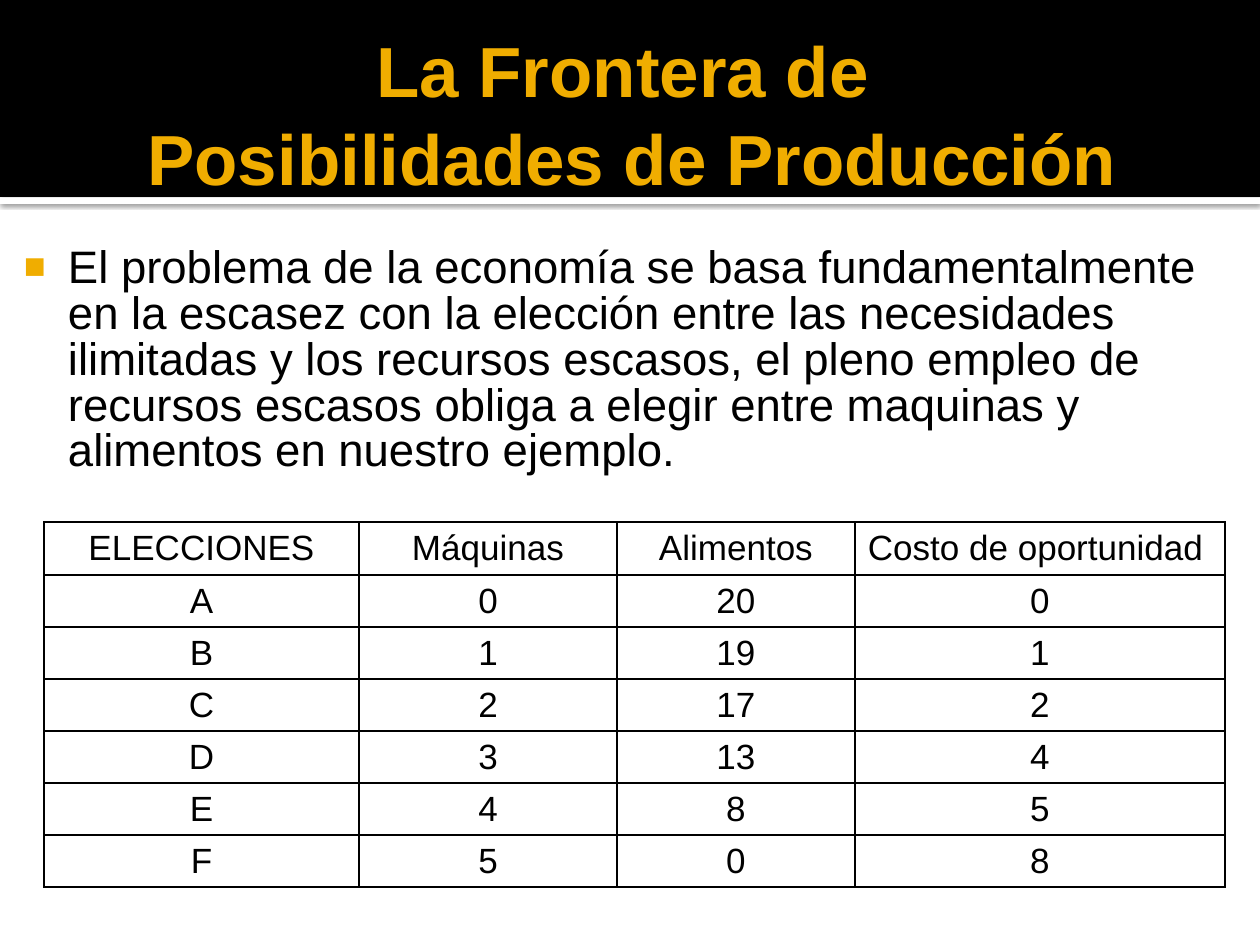
import pptx
import pptx.dml.color
import pptx.enum.shapes
import pptx.enum.text
import pptx.oxml
import pptx.oxml.ns
import pptx.util

ALIGN = pptx.enum.text.PP_ALIGN
ANCHOR = pptx.enum.text.MSO_ANCHOR
COLORS = {"black": "000000", "white": "FFFFFF", "gold": "F0AD00"}
NAMESPACE = pptx.oxml.ns.nsdecls("a")


def px(value):
    return round(value * 914400 / 126)


def color(name):
    return pptx.dml.color.RGBColor.from_string(COLORS[name])


def assign(target, values):
    for name, value in values.items():
        setattr(target, name, value)


def add_xml(parent, tag, attributes="", content=""):
    parent.append(pptx.oxml.parse_xml(f"<a:{tag} {NAMESPACE} {attributes}>{content}</a:{tag}>"))


class SlideBuilder:
    font_name = "Arial"

    def __init__(self, presentation):
        self.slide = presentation.slides.add_slide(presentation.slide_layouts[5])

    def fill_text(self, frame, text, size, ink, frame_format, paragraph_format, bold=False):
        assign(frame, frame_format)
        frame.text = text
        paragraph = frame.paragraphs[0]
        assign(paragraph, paragraph_format)
        for run in paragraph.runs:
            assign(run.font, {"name": self.font_name, "size": pptx.util.Pt(size), "bold": bold})
            run.font.color.rgb = color(ink)
        return paragraph

    def band(self, top, height, fill, shadow=False):
        shape = self.slide.shapes.add_shape(
            pptx.enum.shapes.MSO_SHAPE.RECTANGLE, 0, px(top), px(1260), px(height))
        shape.shadow.inherit = False
        shape.fill.solid()
        shape.fill.fore_color.rgb = color(fill)
        shape.line.fill.background()
        if shadow:
            effects = shape._element.spPr.find(pptx.oxml.ns.qn("a:effectLst"))
            add_xml(effects, "outerShdw", 'blurRad="31750" dist="10160" dir="5400000"',
                    f'<a:srgbClr val="{COLORS["black"]}"><a:alpha val="60000"/></a:srgbClr>')

    def title(self, text, box):
        shape = self.slide.shapes.title
        self.slide.shapes._spTree.append(shape._element)
        assign(shape, dict(zip(("left", "top", "width", "height"), map(px, box))))
        self.fill_text(shape.text_frame, text, 40.5, "gold",
                       {"word_wrap": True, "vertical_anchor": ANCHOR.MIDDLE,
                        "auto_size": pptx.enum.text.MSO_AUTO_SIZE.NONE,
                        "margin_left": px(13), "margin_right": px(6),
                        "margin_top": px(6), "margin_bottom": px(6)},
                       {"alignment": ALIGN.CENTER, "line_spacing": 1.04}, bold=True)

    def bullet(self, text, box):
        shape = self.slide.shapes.add_textbox(*map(px, box))
        paragraph = self.fill_text(shape.text_frame, text, 26, "black",
                                   {"word_wrap": True, "margin_left": px(8), "margin_right": px(13),
                                    "margin_top": px(13), "margin_bottom": px(6)},
                                   {"line_spacing": 0.84})
        properties = paragraph._p.get_or_add_pPr()
        properties.set("marL", str(px(60)))
        properties.set("indent", str(px(-44)))
        add_xml(properties, "buClr", content=f'<a:srgbClr val="{COLORS["gold"]}"/>')
        add_xml(properties, "buSzPct", 'val="80000"')
        add_xml(properties, "buFont", f'typeface="{self.font_name}"')
        add_xml(properties, "buChar", 'char="■"')

    def cell(self, cell, text, alignment):
        self.fill_text(cell.text_frame, text, 20, "black",
                       {"word_wrap": True}, {"alignment": alignment})
        assign(cell, {"vertical_anchor": ANCHOR.MIDDLE, "margin_left": px(13), "margin_right": px(13),
                      "margin_top": px(4), "margin_bottom": px(4)})
        properties = cell._tc.get_or_add_tcPr()
        for side in ("lnL", "lnR", "lnT", "lnB"):
            add_xml(properties, side, 'w="12700"',
                    f'<a:solidFill><a:srgbClr val="{COLORS["black"]}"/></a:solidFill>')
        cell.fill.background()

    def table(self, rows, left, top, widths, heights):
        frame = self.slide.shapes.add_table(
            len(rows), len(widths), px(left), px(top), px(sum(widths)), px(sum(heights)))
        table = frame.table
        assign(table, {"first_row": False, "horz_banding": False})
        for column, width in zip(table.columns, widths):
            column.width = px(width)
        for row, height in zip(table.rows, heights):
            row.height = px(height)
        for row_index, row in enumerate(rows):
            for column_index, text in enumerate(row):
                is_long_header = row_index == 0 and column_index == len(row) - 1
                self.cell(table.cell(row_index, column_index), text,
                          ALIGN.JUSTIFY if is_long_header else ALIGN.CENTER)


def main():
    presentation = pptx.Presentation()
    assign(presentation, {"slide_width": px(1260), "slide_height": px(945)})
    builder = SlideBuilder(presentation)
    builder.band(198, 6, "white", shadow=True)
    builder.band(0, 197, "black")
    builder.title("La Frontera de \vPosibilidades de Producción", (44, 14, 1170, 195))
    builder.bullet(
        "El problema de la economía se basa fundamentalmente en la escasez con la elección "
        "entre las necesidades ilimitadas y los recursos escasos, el pleno empleo de recursos "
        "escasos obliga a elegir entre maquinas y alimentos en nuestro ejemplo.",
        (0, 234, 1235, 277))
    choices = [
        ("ELECCIONES", "Máquinas", "Alimentos", "Costo de oportunidad"),
        ("A", "0", "20", "0"),
        ("B", "1", "19", "1"),
        ("C", "2", "17", "2"),
        ("D", "3", "13", "4"),
        ("E", "4", "8", "5"),
        ("F", "5", "0", "8"),
    ]
    builder.table(choices, 44, 522, (315, 258, 238, 370), [53] + [52] * 6)
    presentation.save("out.pptx")


if __name__ == "__main__":
    main()
